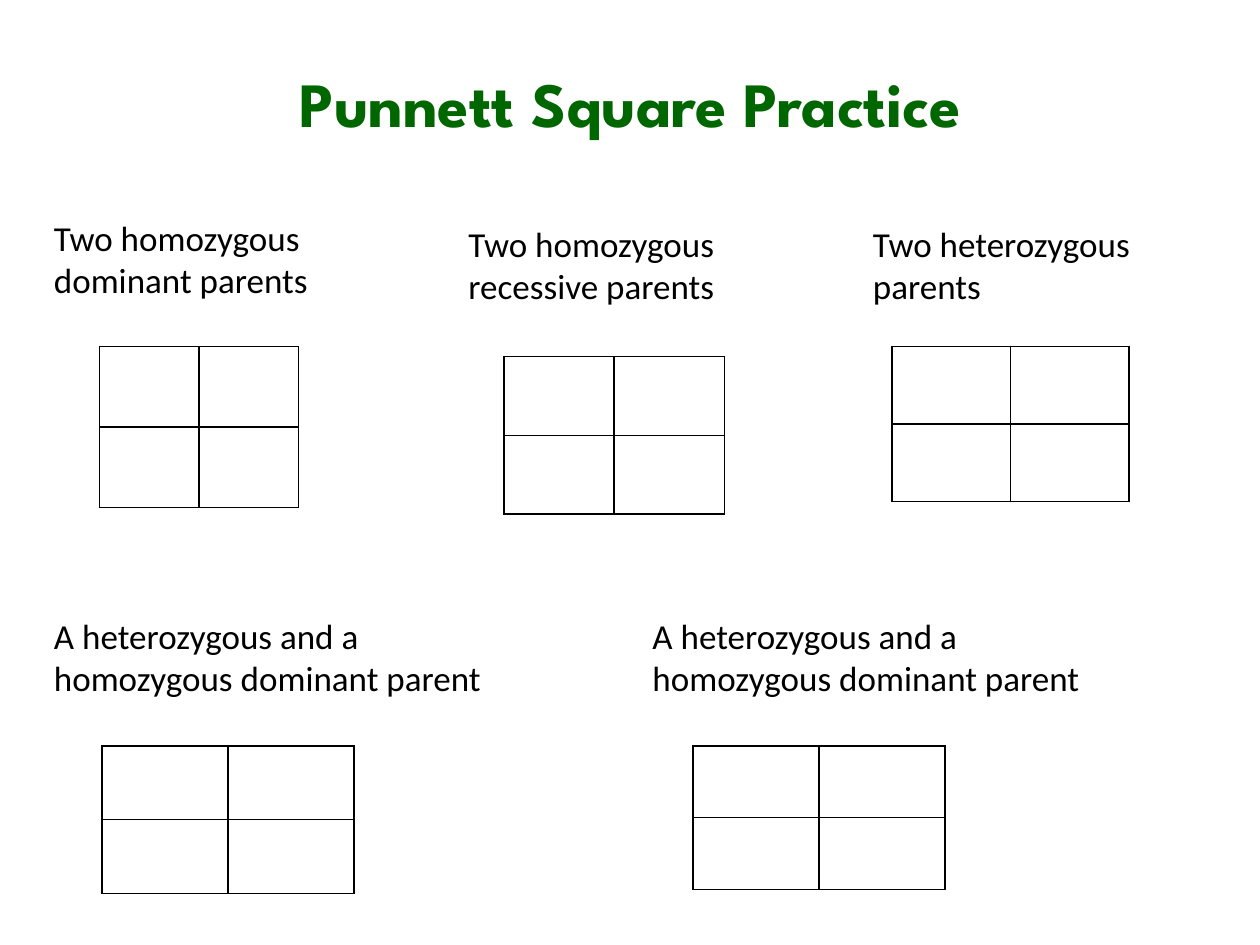
"""Build a Punnett square practice slide with five captioned empty grids."""
from dataclasses import dataclass

from lxml import etree
from pptx import Presentation
from pptx import util as u
from pptx.dml.color import RGBColor
from pptx.enum import text
from pptx.oxml import ns

BLACK = "000000"
GREEN = "006600"
GRID_SIZE = 2
BORDER_POINTS = 1
CAPTION_HEIGHT = 0.77
TITLE_FORMAT = {"name": "League Spartan", "size": u.Pt(36), "bold": True}
CAPTION_FORMAT = {"name": "Calibri", "size": u.Pt(20), "bold": False}


@dataclass(frozen=True)
class Box:
    left: float
    top: float
    width: float
    height: float

    def lengths(self) -> tuple:
        return tuple(u.Inches(value) for value in (self.left, self.top, self.width, self.height))


@dataclass(frozen=True)
class Cross:
    caption: str
    caption_box: Box
    square: Box


MIXED_PARENTS = "A heterozygous and a homozygous dominant parent"
CROSSES = (
    Cross("Two homozygous dominant parents",
          Box(0.33, 1.67, 2.5, CAPTION_HEIGHT), Box(0.79, 2.75, 1.58, 1.28)),
    Cross("Two homozygous recessive parents",
          Box(3.62, 1.72, 2.67, CAPTION_HEIGHT), Box(4, 2.83, 1.75, 1.25)),
    Cross("Two heterozygous parents",
          Box(6.83, 1.72, 2.85, CAPTION_HEIGHT), Box(7.08, 2.75, 1.88, 1.23)),
    Cross(MIXED_PARENTS,
          Box(0.33, 4.83, 3.67, CAPTION_HEIGHT), Box(0.81, 5.92, 2, 1.17)),
    Cross(MIXED_PARENTS,
          Box(5.08, 4.83, 3.75, CAPTION_HEIGHT), Box(5.5, 5.92, 2, 1.14)),
)


def color(value: str) -> RGBColor:
    return RGBColor.from_string(value)


def add_text(slide, box: Box, words: str, font_format: dict, ink: str,
             alignment=text.PP_ALIGN.LEFT, anchor=text.MSO_ANCHOR.TOP) -> None:
    frame = slide.shapes.add_textbox(*box.lengths()).text_frame
    frame.word_wrap = True
    frame.vertical_anchor = anchor
    paragraph = frame.paragraphs[0]
    paragraph.alignment = alignment
    run = paragraph.add_run()
    run.text = words
    for name, value in font_format.items():
        setattr(run.font, name, value)
    run.font.color.rgb = color(ink)


def add_borders(cell, ink: str) -> None:
    properties = cell._tc.get_or_add_tcPr()
    for position, side in enumerate(("lnL", "lnR", "lnT", "lnB")):
        line = etree.Element(ns.qn(f"a:{side}"), w=str(u.Pt(BORDER_POINTS)))
        fill = etree.SubElement(line, ns.qn("a:solidFill"))
        etree.SubElement(fill, ns.qn("a:srgbClr"), val=str(color(ink)))
        properties.insert(position, line)


def add_square(slide, box: Box) -> None:
    table = slide.shapes.add_table(GRID_SIZE, GRID_SIZE, *box.lengths()).table
    table.first_row = False
    table.horz_banding = False
    for cell in table.iter_cells():
        cell.fill.background()
        add_borders(cell, BLACK)


def main() -> None:
    presentation = Presentation()
    presentation.slide_width = u.Inches(10)
    presentation.slide_height = u.Inches(7.5)
    slide = presentation.slides.add_slide(presentation.slide_layouts[6])
    add_text(slide, Box(0.17, 0.3, 9.67, 1.03), "Punnett Square Practice", TITLE_FORMAT,
             GREEN, text.PP_ALIGN.CENTER, text.MSO_ANCHOR.MIDDLE)
    for cross in CROSSES:
        add_text(slide, cross.caption_box, cross.caption, CAPTION_FORMAT, BLACK)
        add_square(slide, cross.square)
    presentation.save("out.pptx")


if __name__ == "__main__":
    main()
